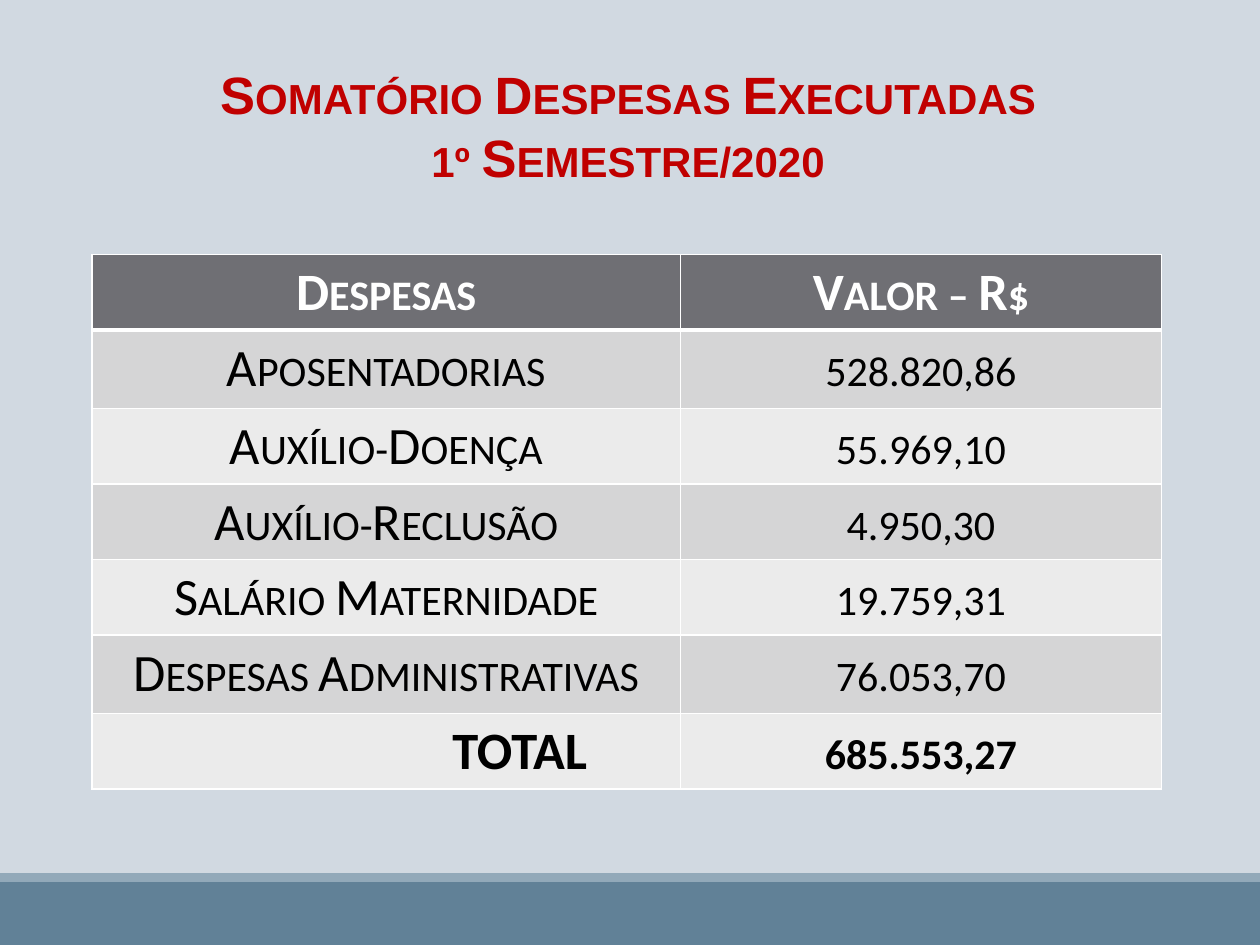
import pptx
import pptx.dml.color
import pptx.enum.shapes
import pptx.enum.text
import pptx.oxml.ns
import pptx.util
from lxml import etree

RGB = pptx.dml.color.RGBColor
BACKDROP = RGB(0xD1, 0xD9, 0xE1)
FOOTER = RGB(0x61, 0x81, 0x97)
FOOTER_EDGE = RGB(0x92, 0xA9, 0xB9)
TITLE_RED = RGB(0xC0, 0x00, 0x00)
HEADER_GREY = RGB(0x6F, 0x6F, 0x74)
BAND_DARK = RGB(0xD5, 0xD5, 0xD6)
BAND_LIGHT = RGB(0xEB, 0xEB, 0xEB)
WHITE = RGB(0xFF, 0xFF, 0xFF)
BLACK = RGB(0x00, 0x00, 0x00)

WIDTH, HEIGHT = 10, 7.5
COLUMNS = [4.67, 3.82]
ROWS = [0.6, 0.62, 0.6, 0.6, 0.6, 0.62, 0.6]
EXPENSES = [
    ("Despesas", "Valor – R$"),
    ("Aposentadorias", "528.820,86"),
    ("Auxílio-Doença", "55.969,10"),
    ("Auxílio-Reclusão", "4.950,30"),
    ("Salário Maternidade", "19.759,31"),
    ("Despesas Administrativas", "76.053,70"),
    ("TOTAL", "685.553,27"),
]


def inches(*lengths):
    """Convert lengths in inches to slide units."""
    return [pptx.util.Inches(length) for length in lengths]


def write_text(para, text, margins=None, **formats):
    """Write one centred small-caps span with the given font formats."""
    para.alignment = pptx.enum.text.PP_ALIGN.CENTER
    for side, length in (margins or {}).items():
        para._p.get_or_add_pPr().set(side, str(pptx.util.Inches(length)))
    span = para.add_run()
    span.text = text
    color = formats.pop("color")
    for name, value in {"size": pptx.util.Pt(30), **formats}.items():
        setattr(span.font, name, value)
    span.font.color.rgb = color
    span._r.get_or_add_rPr().set("cap", "small")


def add_bar(page, top, height, color):
    """Add a plain bar across the full slide width."""
    bar = page.shapes.add_shape(
        pptx.enum.shapes.MSO_SHAPE.RECTANGLE, *inches(0, top, WIDTH, height))
    bar.shadow.inherit = False
    bar.fill.solid()
    bar.fill.fore_color.rgb = color
    bar.line.fill.background()


def add_title(page):
    """Add the two-line title."""
    frame = page.shapes.add_textbox(*inches(0.73, 0.44, 8.7, 1.11)).text_frame
    formats = {"word_wrap": True,
               "vertical_anchor": pptx.enum.text.MSO_ANCHOR.MIDDLE}
    for name, value in formats.items():
        setattr(frame, name, value)
    font = {"name": "Arial", "bold": True, "color": TITLE_RED}
    write_text(frame.paragraphs[0], "Somatório Despesas Executadas",
               {"marR": 0.19}, **font)
    write_text(frame.add_paragraph(), "1º Semestre/2020", **font)


def set_borders(cell, widths):
    """Draw white cell borders with the given point widths by side."""
    properties = cell._tc.get_or_add_tcPr()
    for position, (side, width) in enumerate(widths.items()):
        line = etree.Element(pptx.oxml.ns.qn(f"a:{side}"),
                             w=str(pptx.util.Pt(width)))
        fill = etree.SubElement(line, pptx.oxml.ns.qn("a:solidFill"))
        etree.SubElement(fill, pptx.oxml.ns.qn("a:srgbClr"), val=str(WHITE))
        properties.insert(position, line)


def add_expenses(page):
    """Add the banded expense table with its header and total rows."""
    table = page.shapes.add_table(
        len(ROWS), len(COLUMNS),
        *inches(0.73, 2.02, sum(COLUMNS), sum(ROWS))).table
    for column, width in zip(table.columns, inches(*COLUMNS)):
        column.width = width
    for row, height in zip(table.rows, inches(*ROWS)):
        row.height = height
    last = len(ROWS) - 1
    for index, texts in enumerate(EXPENSES):
        header = index == 0
        band = BAND_DARK if index % 2 else BAND_LIGHT
        for column, text in enumerate(texts):
            cell = table.cell(index, column)
            cell.fill.solid()
            cell.fill.fore_color.rgb = HEADER_GREY if header else band
            set_borders(cell, {"lnL": 1, "lnR": 1,
                               "lnT": 3 if index == 1 else 1,
                               "lnB": 3 if header else 1})
            margins = {"marL": 1.05} if text == "TOTAL" else None
            write_text(cell.text_frame.paragraphs[0], text, margins,
                       name="Calibri", bold=index in (0, last),
                       color=WHITE if header else BLACK)


def main():
    """Build and save the expense slide."""
    deck = pptx.Presentation()
    deck.slide_width, deck.slide_height = inches(WIDTH, HEIGHT)
    page = deck.slides.add_slide(deck.slide_layouts[6])
    page.background.fill.solid()
    page.background.fill.fore_color.rgb = BACKDROP
    add_bar(page, 7, 0.5, FOOTER)
    add_bar(page, 6.93, 0.07, FOOTER_EDGE)
    add_title(page)
    add_expenses(page)
    deck.save("out.pptx")


if __name__ == "__main__":
    main()
